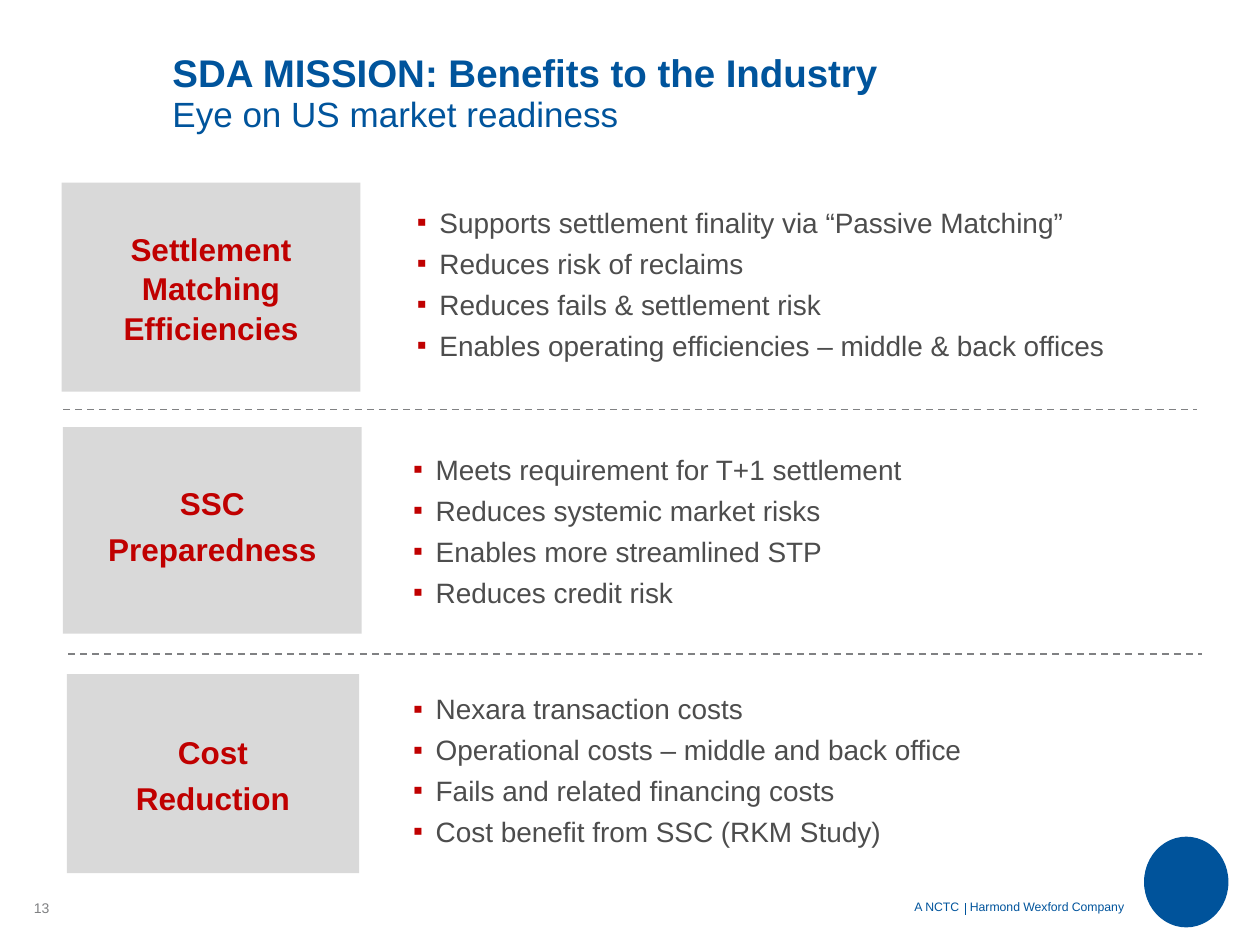
from collections import namedtuple

from lxml import etree
from pptx import Presentation
from pptx import util as u
from pptx.dml.color import RGBColor
from pptx.enum import dml, shapes, text
from pptx.oxml.ns import qn

COLORS = {"blue": "00549C", "logo": "00539B", "gray": "808183",
          "panel": "D9D9D9", "red": "C00000", "body": "4D4D4D"}
CELL = u.Inches(0.1)
Box = namedtuple("Box", "left top width height")

SECTIONS = [
    (Box(4.9, 14.5, 23.7, 16.6), ["Settlement Matching Efficiencies"], 0, (27.2, 1.2),
     ["Supports settlement finality via “Passive Matching”",
      "Reduces risk of reclaims",
      "Reduces fails & settlement risk",
      "Enables operating efficiencies – middle & back offices"], 0.1),
    (Box(5, 33.9, 23.7, 16.4), ["SSC", "Preparedness"], 0.8, (26.8, 1.4),
     ["Meets requirement for T+1 settlement",
      "Reduces systemic market risks",
      "Enables more streamlined STP",
      "Reduces credit risk"], 0.4),
    (Box(5.3, 53.5, 23.2, 15.8), ["Cost", "Reduction"], 0, (26.5, 0.8),
     ["Nexara transaction costs",
      "Operational costs – middle and back office",
      "Fails and related financing costs",
      "Cost benefit from SSC (RKM Study)"], None),
]


def cells(*counts):
    return [round(count * CELL) for count in counts]


def within(box, left, top, width, height):
    return Box(box.left + left, box.top + top, width, height)


def color(name):
    return RGBColor.from_string(COLORS[name])


def style(font, size, name, bold=False):
    font.name, font.size, font.bold = "Arial", u.Pt(size), bold
    font.color.rgb = color(name)


def add_text(page, box, wrap=True):
    frame = page.shapes.add_textbox(*cells(*box)).text_frame
    frame.word_wrap = wrap
    return frame


def add_panel(page, box, kind, fill):
    panel = page.shapes.add_shape(kind, *cells(*box))
    panel.shadow.inherit = False
    panel.fill.solid()
    panel.fill.fore_color.rgb = color(fill)
    panel.line.fill.background()
    return panel


def add_rule(page, box, name, width):
    rule = page.shapes.add_connector(shapes.MSO_CONNECTOR.STRAIGHT, *cells(
        box.left, box.top, box.left + box.width, box.top + box.height))
    rule.line.color.rgb = color(name)
    rule.line.width = u.Pt(width)
    etree.SubElement(rule._element.spPr, qn("a:effectLst"))
    return rule


def add_bullet(para):
    props = para._p.get_or_add_pPr()
    props.set("marL", str(u.Inches(0.18)))
    props.set("indent", str(-u.Inches(0.18)))
    tint = etree.SubElement(props, qn("a:buClr"))
    etree.SubElement(tint, qn("a:srgbClr"), val=COLORS["red"])
    etree.SubElement(props, qn("a:buFont"), typeface="Arial")
    etree.SubElement(props, qn("a:buChar"), char="▪")


def fill_lines(frame, lines, size, name, bold=False, align=None, bullets=False):
    for index, line in enumerate(lines):
        para = frame.add_paragraph() if index else frame.paragraphs[0]
        para.text = line
        para.line_spacing = 1.05
        if index:
            para.space_before = u.Pt(size * 0.2)
        if bullets:
            add_bullet(para)
        para.alignment = align
        style(para.font, size, name, bold)


def add_title(page, box):
    frame = add_text(page, box)
    frame.vertical_anchor = text.MSO_ANCHOR.MIDDLE
    para = frame.paragraphs[0]
    para.line_spacing = 0.95
    heading = para.add_run()
    heading.text = "SDA MISSION: Benefits to the Industry"
    style(heading.font, 22, "blue", True)
    para.add_line_break()
    subtitle = para.add_run()
    subtitle.text = "Eye on US market readiness"
    style(subtitle.font, 20, "blue")


def add_section(page, box, label, lift, offset, points, rule_shift):
    panel = add_panel(page, box, shapes.MSO_SHAPE.RECTANGLE, "panel")
    frame = panel.text_frame
    frame.word_wrap = True
    frame.vertical_anchor = text.MSO_ANCHOR.MIDDLE
    frame.margin_top, frame.margin_bottom = cells(0, lift)
    fill_lines(frame, label, 18, "red", True, text.PP_ALIGN.CENTER)
    body = add_text(page, within(box, *offset, 60, 13.4))
    fill_lines(body, points, 16, "body", bullets=True)
    if rule_shift is not None:
        rule = add_rule(page, within(box, rule_shift, 18, 90, 0), "gray", 1)
        rule.line.dash_style = dml.MSO_LINE.DASH


def add_footer(page, box):
    number = add_text(page, within(box, 0, 4.5, 3.4, 2.3), False)
    number.text = "13"
    style(number.paragraphs[0].font, 8, "gray")
    para = add_text(page, within(box, 69.9, 4.5, 19.3, 2.2)).paragraphs[0]
    para.text = "A NCTC\tHarmond Wexford Company"
    tabs = etree.SubElement(para._p.get_or_add_pPr(), qn("a:tabLst"))
    etree.SubElement(tabs, qn("a:tab"), pos=str(u.Inches(0.44)), algn="l")
    style(para.font, 7, "blue")
    add_rule(page, within(box, 74.9, 5.3, 0, 0.9), "blue", 0.5)
    add_panel(page, within(box, 89.1, 0, 6.7, 7.2), shapes.MSO_SHAPE.OVAL, "logo")


def main():
    deck = Presentation()
    deck.slide_width, deck.slide_height = cells(100, 75)
    page = deck.slides.add_slide(deck.slide_layouts[6])
    add_title(page, Box(12.7, 2.8, 83.9, 9.3))
    for section in SECTIONS:
        add_section(page, *section)
    add_footer(page, Box(1.7, 66.4, 95.8, 7.2))
    deck.save("out.pptx")


if __name__ == "__main__":
    main()
